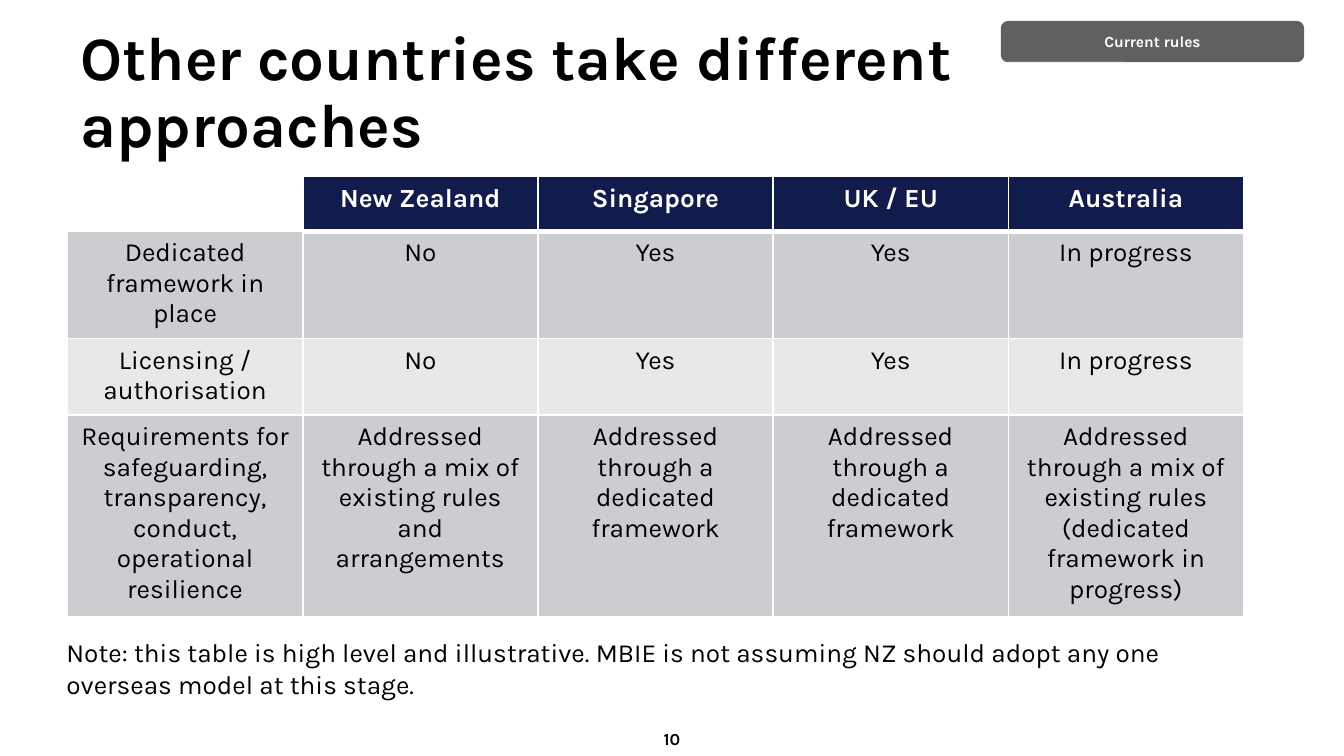
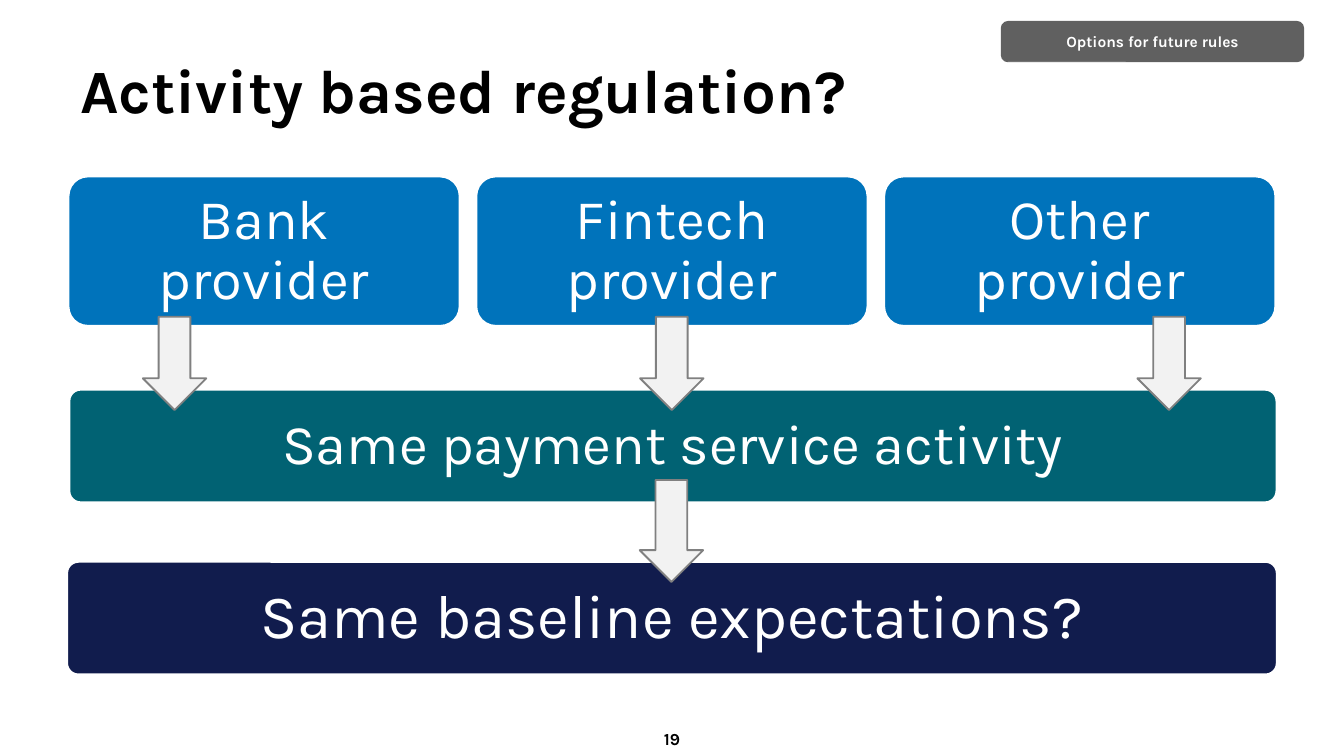
from lxml import etree
from pptx import Presentation
from pptx.dml.color import RGBColor
from pptx.enum.shapes import MSO_SHAPE
from pptx.enum.text import MSO_ANCHOR, PP_ALIGN
from pptx.oxml.ns import qn
from pptx.util import Pt

# Enum members
ROUNDED = MSO_SHAPE.ROUNDED_RECTANGLE
DOWN_ARROW = MSO_SHAPE.DOWN_ARROW
MIDDLE = MSO_ANCHOR.MIDDLE
LEFT, CENTER = PP_ALIGN.LEFT, PP_ALIGN.CENTER

# Shared look
FONT = "Karla"
BLACK = RGBColor(0x00, 0x00, 0x00)
WHITE = RGBColor(0xFF, 0xFF, 0xFF)
NAVY = RGBColor(0x11, 0x1C, 0x4D)
TEAL = RGBColor(0x01, 0x62, 0x73)
BLUE = RGBColor(0x00, 0x73, 0xBB)
TAG_GREY = RGBColor(0x60, 0x60, 0x60)
ARROW_FILL = RGBColor(0xF2, 0xF2, 0xF2)
ARROW_LINE = RGBColor(0x80, 0x80, 0x80)
ROW_DARK = RGBColor(0xCC, 0xCD, 0xD0)
ROW_LIGHT = RGBColor(0xE7, 0xE8, 0xE9)

# Content
COUNTRY_ROWS = [
    ["", "New Zealand", "Singapore", "UK / EU", "Australia"],
    ["Dedicated framework in place", "No", "Yes", "Yes", "In progress"],
    ["Licensing / authorisation", "No", "Yes", "Yes", "In progress"],
    ["Requirements for safeguarding, transparency, conduct, operational resilience",
     "Addressed through a mix of existing rules and arrangements",
     "Addressed through a dedicated framework",
     "Addressed through a dedicated framework",
     "Addressed through a mix of existing rules (dedicated framework in progress)"],
]
NOTE = ("Note: this table is high level and illustrative. MBIE is not assuming NZ "
        "should adopt any one overseas model at this stage.")
PROVIDERS = ["Bank provider", "Fintech provider", "Other provider"]


def write(frame, text, size=14, color=BLACK, bold=False, align=LEFT, spacing=None):
    """Put one formatted paragraph into a text frame."""
    frame.word_wrap = True
    para = frame.paragraphs[0]
    para.alignment = align
    if spacing:
        para.line_spacing = spacing
    span = para.add_run()
    span.text = text
    span.font.name = FONT
    span.font.size = Pt(size)
    span.font.bold = bold
    span.font.color.rgb = color


def set_insets(frame, across, down):
    frame.margin_left = frame.margin_right = Pt(across)
    frame.margin_top = frame.margin_bottom = Pt(down)


def add_text(page, left, top, width, height, text, **style):
    box = page.shapes.add_textbox(Pt(left), Pt(top), Pt(width), Pt(height))
    box.text_frame.vertical_anchor = MIDDLE
    write(box.text_frame, text, **style)


def add_box(page, kind, left, top, width, height, fill=None, line=None, line_width=1):
    """Add a preset shape; without a colour it has no fill or line."""
    box = page.shapes.add_shape(kind, Pt(left), Pt(top), Pt(width), Pt(height))
    box.shadow.inherit = False
    if fill is None:
        box.fill.background()
    else:
        box.fill.solid()
        box.fill.fore_color.rgb = fill
    if line is None:
        box.line.fill.background()
    else:
        box.line.color.rgb = line
        box.line.width = Pt(line_width)
    box.text_frame.vertical_anchor = MIDDLE
    return box


def add_panel(page, left, top, width, height, text, fill, size, corner=0.1):
    panel = add_box(page, ROUNDED, left, top, width, height, fill, WHITE)
    panel.adjustments[0] = corner
    set_insets(panel.text_frame, 11, 11)
    write(panel.text_frame, text, size=size, color=WHITE, align=CENTER, spacing=0.9)


def add_arrow(page, left, top, height):
    add_box(page, DOWN_ARROW, left, top, 34, height, ARROW_FILL, ARROW_LINE)


def add_borders(cell, top, bottom):
    """White cell borders, one point at the sides."""
    properties = cell._tc.get_or_add_tcPr()
    for side, width in (("L", 1), ("R", 1), ("T", top), ("B", bottom)):
        line = etree.SubElement(properties, qn(f"a:ln{side}"), w=str(Pt(width)))
        fill = etree.SubElement(line, qn("a:solidFill"))
        etree.SubElement(fill, qn("a:srgbClr"), val=str(WHITE))


def add_country_table(page, left, top, column_width, row_height):
    rows, columns = len(COUNTRY_ROWS), len(COUNTRY_ROWS[0])
    table = page.shapes.add_table(rows, columns, Pt(left), Pt(top),
                                  Pt(column_width * columns),
                                  Pt(row_height * rows)).table
    table.first_row = table.horz_banding = False
    for column in table.columns:
        column.width = Pt(column_width)
    for r, texts in enumerate(COUNTRY_ROWS):
        table.rows[r].height = Pt(row_height)
        header = r == 0
        for c, text in enumerate(texts):
            cell = table.cell(r, c)
            if header and not text:
                fill = WHITE
            else:
                fill = NAVY if header else ROW_DARK if r % 2 else ROW_LIGHT
                add_borders(cell, top=3 if r == 1 and c else 1,
                            bottom=3 if header else 1)
            cell.fill.solid()
            cell.fill.fore_color.rgb = fill
            if text:
                write(cell.text_frame, text, bold=header, align=CENTER,
                      color=WHITE if header else BLACK)


def add_page(deck, title, tag, number):
    """Add a page with its title, section tag and page number."""
    page = deck.slides.add_slide(deck.slide_layouts[6])
    add_text(page, 36, 16.5, 648, 67.5, title, size=33, bold=True, spacing=0.9)
    add_text(page, 49.5, 385, 621, 21.5, number, size=9, bold=True, align=CENTER)
    label = add_box(page, ROUNDED, 536.4, 11.5, 162, 21.6, TAG_GREY, TAG_GREY, 0.5)
    set_insets(label.text_frame, 3, 0.7)
    write(label.text_frame, tag, size=8.3, color=WHITE, bold=True, align=CENTER)
    return page


def build_countries(deck):
    page = add_page(deck, "Other countries take different approaches",
                    "Current rules", "10")
    add_country_table(page, 36.2, 94.6, 126, 29.2)
    note = add_box(page, ROUNDED, 25.2, 324, 621, 67.7)
    write(note.text_frame, NOTE)


def build_activity(deck):
    page = add_page(deck, "Activity based regulation?",
                    "Options for future rules", "19")
    # Stacked panels
    add_panel(page, 36, 301, 648, 60.3, "Same baseline expectations?", NAVY, 33)
    add_panel(page, 37.2, 208.8, 646.6, 60.3, "Same payment service activity", TEAL, 30)
    # Providers, each with an arrow down to the activity
    for i, provider in enumerate(PROVIDERS):
        add_panel(page, 36.7 + i * 218.5, 94.6, 209.5, 80, provider, BLUE, 30, 0.13)
        add_arrow(page, 76.5 + i * 266.4, 169.7, 50)
    add_arrow(page, 342.7, 257.2, 54.6)


def main():
    deck = Presentation()
    deck.slide_width, deck.slide_height = Pt(720), Pt(405)
    build_countries(deck)
    build_activity(deck)
    deck.save("out.pptx")


if __name__ == "__main__":
    main()
